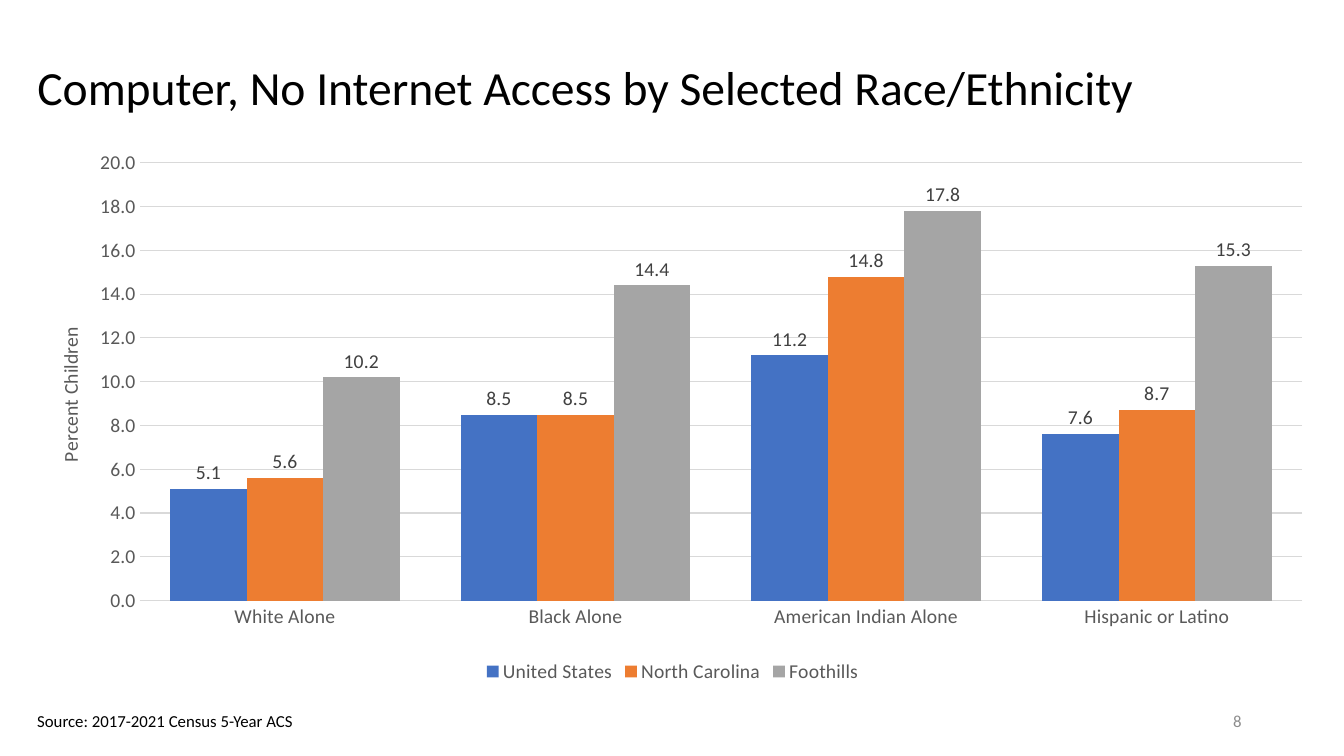
from lxml import etree
from pptx import Presentation
from pptx.chart.data import CategoryChartData
from pptx.dml.color import RGBColor
from pptx.enum.chart import XL_CHART_TYPE as ChartType
from pptx.enum.chart import XL_LABEL_POSITION as LabelPosition
from pptx.enum.chart import XL_LEGEND_POSITION as LegendPosition
from pptx.enum.chart import XL_TICK_MARK as TickMark
from pptx.enum.text import MSO_ANCHOR as Anchor
from pptx.enum.text import PP_ALIGN as Align
from pptx.oxml.ns import qn
from pptx.util import Pt

EMU_PER_PX = 9525
FONT = "Calibri"
NUMBER_FORMAT = "#,##0.0"
TEXT_GRAY, GRID_GRAY, LABEL_GRAY = "595959", "D9D9D9", "404040"
CATEGORIES = ["White Alone", "Black Alone", "American Indian Alone", "Hispanic or Latino"]
SERIES = [
    ("United States", "4472C4", [5.1, 8.5, 11.2, 7.6]),
    ("North Carolina", "ED7D31", [5.6, 8.5, 14.8, 8.7]),
    ("Foothills", "A5A5A5", [10.2, 14.4, 17.8, 15.3]),
]


def px(*lengths):
    """Turn pixel lengths into EMU."""
    return [length * EMU_PER_PX for length in lengths]


def color(hex_string):
    """Turn a hex string into a colour."""
    return RGBColor.from_string(hex_string)


def style_font(font, size, hex_string):
    """Set typeface, size and colour of a font."""
    font.name = FONT
    font.size = Pt(size)
    font.bold = False
    font.color.rgb = color(hex_string)


def style_line(line, hex_string):
    """Give a chart line its colour and width."""
    line.color.rgb = color(hex_string)
    line.width = Pt(0.75)


def set_layout(parent, index, **settings):
    """Place a chart part by fractions of the chart area."""
    for old_layout in parent.findall(qn("c:layout")):
        parent.remove(old_layout)
    layout = etree.Element(qn("c:layout"))
    manual = etree.SubElement(layout, qn("c:manualLayout"))
    for name, value in settings.items():
        etree.SubElement(manual, qn(f"c:{name}")).set("val", str(value))
    parent.insert(index, layout)


def add_title(slide, box):
    """Fill and place the title placeholder."""
    title = slide.shapes.title
    title.left, title.top, title.width, title.height = px(*box)
    frame = title.text_frame
    frame.text = "Computer, No Internet Access by Selected Race/Ethnicity"
    frame.vertical_anchor = Anchor.MIDDLE
    paragraph = frame.paragraphs[0]
    paragraph.alignment = Align.LEFT
    paragraph.line_spacing = 0.9
    style_font(paragraph.runs[0].font, 34, "000000")


def add_note(slide, box, text, hex_string, alignment, anchor):
    """Add a small line of text at the foot of the slide."""
    frame = slide.shapes.add_textbox(*px(*box)).text_frame
    frame.word_wrap = True
    frame.vertical_anchor = anchor
    frame.text = text
    paragraph = frame.paragraphs[0]
    paragraph.alignment = alignment
    style_font(paragraph.runs[0].font, 12, hex_string)


def style_axes(chart):
    """Format both axes, the gridlines and the axis title."""
    for axis in (chart.category_axis, chart.value_axis):
        axis.major_tick_mark = axis.minor_tick_mark = TickMark.NONE
        style_font(axis.tick_labels.font, 14, TEXT_GRAY)
    style_line(chart.category_axis.format.line, GRID_GRAY)
    values = chart.value_axis
    values.minimum_scale, values.maximum_scale, values.major_unit = 0, 20, 2
    values.format.line.fill.background()
    style_line(values.major_gridlines.format.line, GRID_GRAY)
    values.tick_labels.number_format = NUMBER_FORMAT
    values.tick_labels.number_format_is_linked = False
    frame = values.axis_title.text_frame
    frame.text = "Percent Children"
    style_font(frame.paragraphs[0].runs[0].font, 14, TEXT_GRAY)
    title = values.axis_title.format.element if hasattr(values.axis_title.format, "element") else values.axis_title._element
    set_layout(title, 1, xMode="edge", yMode="edge", x=0.02, y=0.33)


def style_series(series, hex_string):
    """Colour one series and label its columns."""
    series.format.fill.solid()
    series.format.fill.fore_color.rgb = color(hex_string)
    series.invert_if_negative = False
    labels = series.data_labels
    labels.show_value = True
    labels.position = LabelPosition.OUTSIDE_END
    labels.number_format = NUMBER_FORMAT
    labels.number_format_is_linked = False
    style_font(labels.font, 14, LABEL_GRAY)


def add_access_chart(slide, box):
    """Add the clustered column chart with its legend."""
    data = CategoryChartData(number_format=NUMBER_FORMAT)
    data.categories = CATEGORIES
    for name, _, values in SERIES:
        data.add_series(name, values)
    chart = slide.shapes.add_chart(ChartType.COLUMN_CLUSTERED, *px(*box), data).chart
    style_font(chart.font, 14, "000000")
    chart.has_title = False
    chart.has_legend = True
    chart.legend.position = LegendPosition.BOTTOM
    chart.legend.include_in_layout = False
    style_font(chart.legend.font, 14, TEXT_GRAY)
    plot = chart.plots[0]
    plot.gap_width, plot.overlap, plot.vary_by_categories = 80, 0, False
    for series, (_, hex_string, _) in zip(plot.series, SERIES):
        style_series(series, hex_string)
    style_axes(chart)
    plot_area = chart.element.find(".//" + qn("c:plotArea")) if hasattr(chart, "element") else chart._chartSpace.find(".//" + qn("c:plotArea"))
    set_layout(plot_area, 0, layoutTarget="inner", xMode="edge", yMode="edge",
               x=0.087, y=0.035, w=0.901, h=0.805)


def build_chart_slide(presentation):
    """Build the slide with title, chart, source and number."""
    slide = presentation.slides.add_slide(presentation.slide_layouts[5])
    add_title(slide, (26, 33, 1225, 105))
    add_access_chart(slide, (26, 137, 1229, 518))
    add_note(slide, (26, 672, 267, 29), "Source: 2017-2021 Census 5-Year ACS",
             "000000", Align.LEFT, Anchor.TOP)
    add_note(slide, (904, 667, 288, 38), "8", "8C8C8C", Align.RIGHT, Anchor.MIDDLE)


def main():
    """Create and save the presentation."""
    presentation = Presentation()
    presentation.slide_width, presentation.slide_height = px(1280, 720)
    build_chart_slide(presentation)
    presentation.save("out.pptx")


if __name__ == "__main__":
    main()
